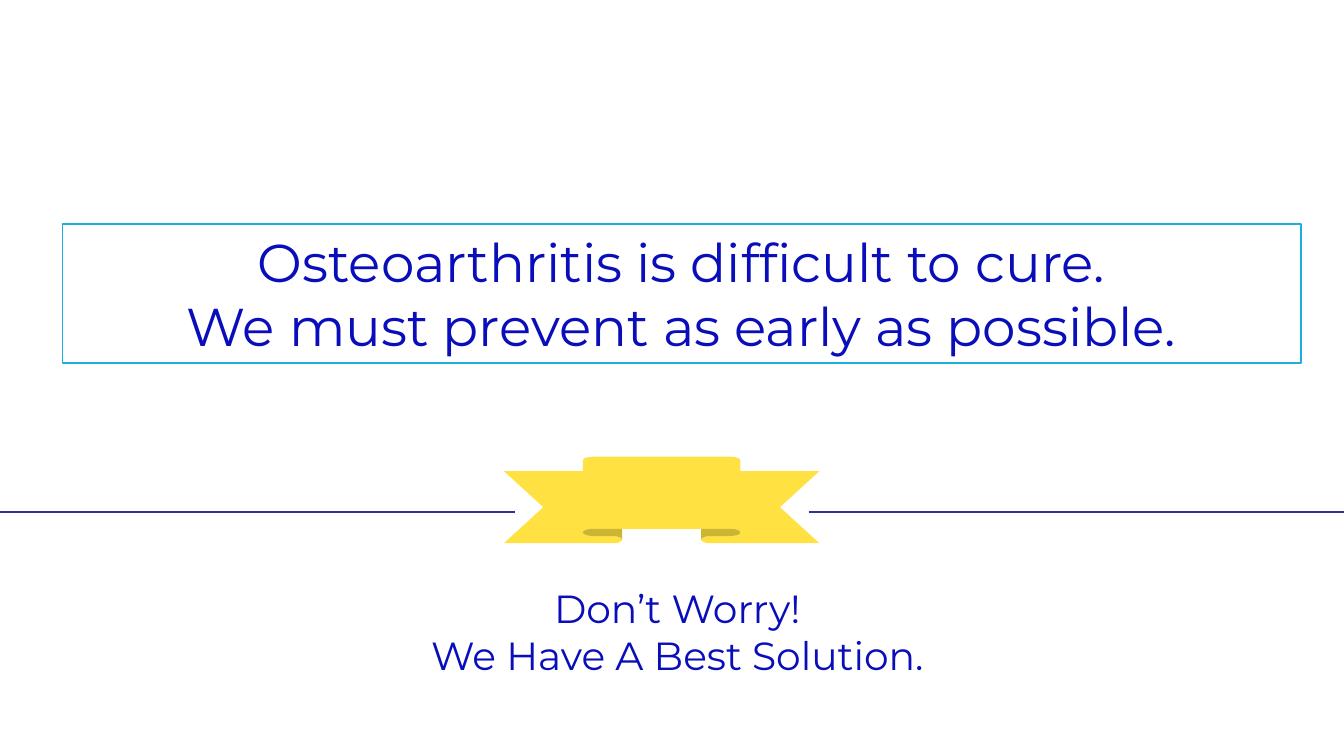
import pptx
import pptx.dml.color
import pptx.enum.shapes
import pptx.enum.text
import pptx.oxml.ns
import pptx.util
from dataclasses import dataclass
from lxml import etree

Cm = pptx.util.Cm
Pt = pptx.util.Pt
RGB = pptx.dml.color.RGBColor


@dataclass(frozen=True)
class Theme:
    font: str = "Montserrat"
    text: RGB = RGB(0x0A, 0x0E, 0xBA)
    paper: RGB = RGB(0xFF, 0xFF, 0xFF)
    frame: RGB = RGB(0x1D, 0xAD, 0xDE)
    ribbon: RGB = RGB(0xFF, 0xE2, 0x41)
    rule: RGB = RGB(0x32, 0x32, 0x91)
    title_size: int = 38
    answer_size: int = 28


THEME = Theme()


def write_text(sp, text, size, color=THEME.text, font=THEME.font,
               align=pptx.enum.text.PP_ALIGN.CENTER,
               anchor=pptx.enum.text.MSO_ANCHOR.TOP):
    tf = sp.text_frame
    tf.word_wrap = True
    tf.auto_size = pptx.enum.text.MSO_AUTO_SIZE.NONE
    tf.vertical_anchor = anchor
    tf.text = text
    for p in tf.paragraphs:
        p.alignment = align
        p.font.name = font
        p.font.size = Pt(size)
        p.font.color.rgb = color


def add_statement(s, left, top, width, height):
    sp = s.shapes.title
    sp.left, sp.top, sp.width, sp.height = Cm(left), Cm(top), Cm(width), Cm(height)
    sp.fill.solid()
    sp.fill.fore_color.rgb = THEME.paper
    sp.line.color.rgb = THEME.frame
    sp.line.width = Pt(1)
    write_text(sp, "Osteoarthritis is difficult to cure.\nWe must prevent as early as possible.",
               THEME.title_size, anchor=pptx.enum.text.MSO_ANCHOR.MIDDLE)


def add_rule(s, x1, x2, y):
    cn = s.shapes.add_connector(pptx.enum.shapes.MSO_CONNECTOR.STRAIGHT,
                                Cm(x1), Cm(y), Cm(x2), Cm(y))
    cn.line.color.rgb = THEME.rule
    cn.line.width = Pt(1.5)
    etree.SubElement(cn._element.spPr, pptx.oxml.ns.qn("a:effectLst"))


def add_divider(s, left, top, width, height):
    ribbon_left, ribbon_width, overlap = left + 12.7, 7.95, 0.27
    y = top + 1.39
    sp = s.shapes.add_shape(pptx.enum.shapes.MSO_SHAPE.UP_RIBBON, Cm(ribbon_left),
                            Cm(top), Cm(ribbon_width), Cm(height))
    sp.shadow.inherit = False
    sp.fill.solid()
    sp.fill.fore_color.rgb = THEME.ribbon
    sp.line.fill.background()
    add_rule(s, left, ribbon_left + overlap, y)
    add_rule(s, ribbon_left + ribbon_width - overlap, left + width, y)


def add_answer(s, left, top, width, height):
    sp = s.shapes.add_textbox(Cm(left), Cm(top), Cm(width), Cm(height))
    write_text(sp, "Don’t Worry!\nWe Have A Best Solution.", THEME.answer_size)


def main():
    prs = pptx.Presentation()
    prs.slide_width, prs.slide_height = Cm(33.87), Cm(19.05)
    s = prs.slides.add_slide(prs.slide_layouts[5])
    add_statement(s, 1.57, 5.64, 31.22, 3.51)
    add_divider(s, 0, 11.51, 33.87, 2.18)
    add_answer(s, 5.03, 14.6, 24.08, 2.64)
    prs.save("out.pptx")


if __name__ == "__main__":
    main()
